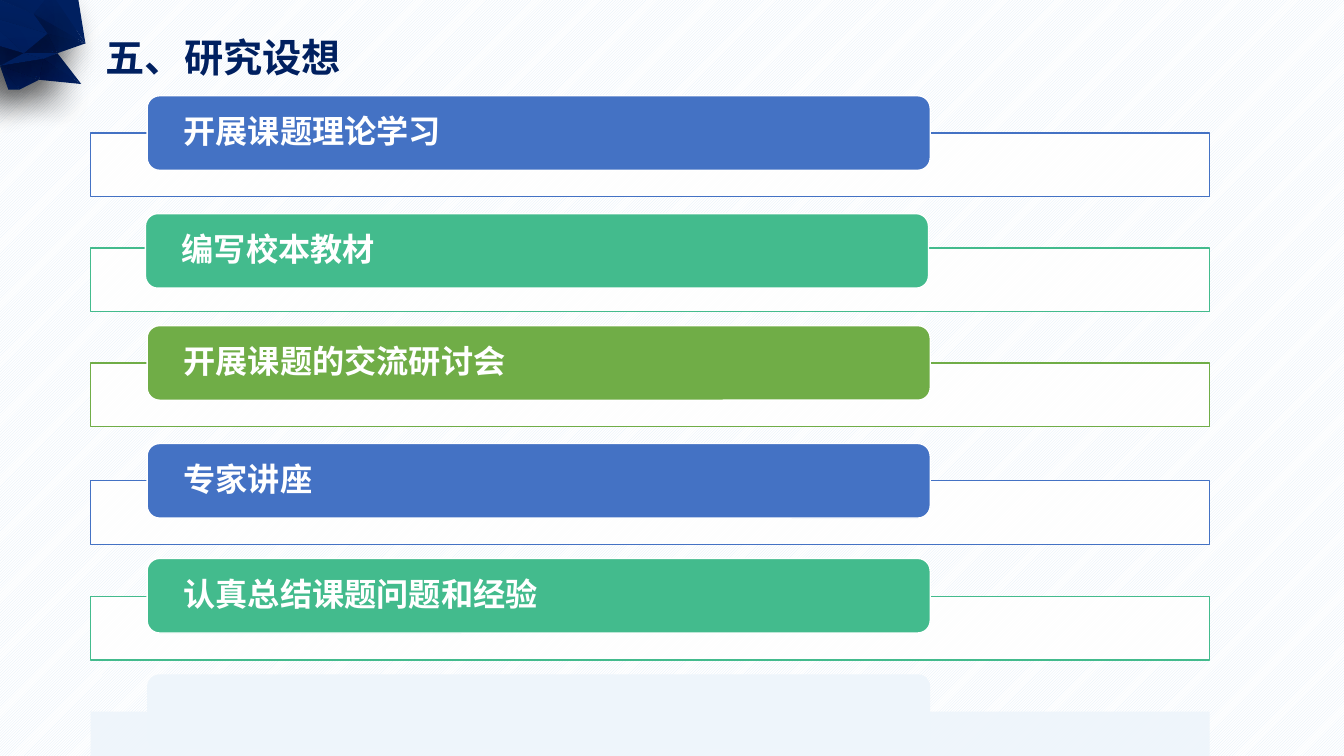
from dataclasses import dataclass

from lxml import etree
from pptx import Presentation
from pptx.dml.color import RGBColor
from pptx.enum.dml import MSO_PATTERN
from pptx.enum.shapes import MSO_SHAPE
from pptx.enum.text import MSO_ANCHOR, MSO_AUTO_SIZE, PP_ALIGN
from pptx.oxml.ns import qn
from pptx.util import Pt

RECTANGLE = MSO_SHAPE.RECTANGLE
ROUNDED = MSO_SHAPE.ROUNDED_RECTANGLE
OVAL = MSO_SHAPE.OVAL
STRIPES = MSO_PATTERN.DARK_UPWARD_DIAGONAL
TOP, MIDDLE = MSO_ANCHOR.TOP, MSO_ANCHOR.MIDDLE
LEFT = PP_ALIGN.LEFT
FIT_SHAPE = MSO_AUTO_SIZE.SHAPE_TO_FIT_TEXT
TITLE_ONLY = 5


@dataclass(frozen=True)
class Theme:
    navy: str = "002060"
    blue: str = "4472C4"
    teal: str = "43BB8D"
    green: str = "70AD47"
    pale: str = "EEF5FB"
    stripe: str = "DEEBF7"
    white: str = "FFFFFF"
    black: str = "000000"
    title_font: str = "Noto Sans CJK SC"
    body_font: str = "Calibri"
    title_size: float = 28
    body_size: float = 23


THEME = Theme()

STEPS = [
    ("开展课题理论学习", THEME.blue, 105.1, 68.4, 95),
    ("编写校本教材", THEME.teal, 103.9, 152.6, 177.1),
    ("开展课题的交流研讨会", THEME.green, 105.1, 232.6, 259.2),
    ("专家讲座", THEME.blue, 105.1, 316.8, 343.4),
    ("认真总结课题问题和经验", THEME.teal, 105.1, 398.9, 426.2),
    ("", THEME.pale, 105.1, 481.7, 508.3),
]

INNER_CRYSTAL = dict(
    A=(54, 57.6), B=(25.9, 54.7), C=(28.8, 40.3), D=(0, 45.4), E=(13, 61.9),
    F=(5.8, 61.2), G=(15.8, 36.7), H=(0, 31.7), I=(37.4, 36.7), J=(31, 23.8),
    K=(56.2, 30.2), L=(22.3, 9.4), M=(29.5, 0), N=(36.7, 0), O=(51.1, 0),
    P=(0, 0), Q=(0, 13), R=(0, 20.9),
)
OUTER_CRYSTAL = dict(
    A=(58.3, 59.8), B=(28.1, 56.9), C=(31, 41.8), D=(0, 46.8), E=(14.4, 64.1),
    F=(5.8, 64.1), G=(17.3, 38.2), H=(0, 33.1), I=(41, 38.2), J=(33.8, 24.5),
    K=(61.2, 31), L=(24.5, 10.1), M=(31.7, 0), N=(40.3, 0), O=(56.2, 0),
    P=(0, 0), Q=(0, 13.7), R=(0, 21.6),
)
FACETS = ("ABC DBC EBD EFD DGH ICA JGI IKJ JKL MLKN NKO MLP QPLJ RGJQ HRG "
          "DGC GIC").split()
DOTTED_CORNERS = "EFBCIGJL"
DOT = 0.8


class Canvas:
    def __init__(self, theme, page):
        self.theme = theme
        self.page = page

    def background(self):
        fill = self.page.background.fill
        fill.patterned()
        fill.pattern = STRIPES
        fill.fore_color.rgb = RGBColor.from_string(self.theme.stripe)
        fill.back_color.rgb = RGBColor.from_string(self.theme.white)

    def paint(self, shape, fill, line=None, opacity=None):
        shape.shadow.inherit = False
        shape.fill.solid()
        shape.fill.fore_color.rgb = RGBColor.from_string(fill)
        if opacity:
            color = shape.element.spPr.find(qn("a:solidFill")).find(qn("a:srgbClr"))
            etree.SubElement(color, qn("a:alpha"), val=str(opacity * 1000))
        if line:
            shape.line.color.rgb = RGBColor.from_string(line)
            shape.line.width = Pt(1)
        else:
            shape.line.fill.background()

    def cast_shadow(self, shape):
        effects = shape.element.spPr.find(qn("a:effectLst"))
        shadow = etree.SubElement(
            effects, qn("a:outerShdw"), blurRad=str(Pt(25)), dist=str(Pt(15)),
            dir=str(135 * 60000), algn="tr", rotWithShape="0")
        color = etree.SubElement(shadow, qn("a:srgbClr"), val=self.theme.black)
        etree.SubElement(color, qn("a:alpha"), val="50000")

    def shape(self, kind, left, top, width, height, parent=None):
        shapes = (parent or self.page).shapes
        return shapes.add_shape(kind, Pt(left), Pt(top), Pt(width), Pt(height))

    def add_span(self, para, text, font, size, color):
        span = para.add_run()
        span.text = text
        span.font.name = font
        span.font.size = Pt(size)
        span.font.bold = True
        span.font.color.rgb = RGBColor.from_string(color)
        return span

    def title(self, text, left, top, width, height):
        box = self.page.shapes.title
        box.left, box.top = Pt(left), Pt(top)
        box.width, box.height = Pt(width), Pt(height)
        frame = box.text_frame
        frame.word_wrap = False
        frame.auto_size = FIT_SHAPE
        frame.vertical_anchor = TOP
        para = frame.paragraphs[0]
        para.alignment = LEFT
        theme = self.theme
        span = self.add_span(para, text, theme.title_font, theme.title_size, theme.navy)
        properties = span._r.get_or_add_rPr()
        etree.SubElement(properties, qn("a:ea"), typeface=theme.title_font)

    def frame(self, top, fill, line):
        box = self.shape(RECTANGLE, 64.8, top, 799.2, 45.4)
        self.paint(box, fill, line, opacity=90)

    def tab(self, text, left, top, fill, line):
        box = self.shape(ROUNDED, left, top, 559.4, 53.3)
        self.paint(box, fill, line)
        if not text:
            return
        frame = box.text_frame
        frame.word_wrap = True
        frame.vertical_anchor = MIDDLE
        frame.margin_left = frame.margin_right = Pt(23.4)
        frame.margin_top = frame.margin_bottom = Pt(2.6)
        para = frame.paragraphs[0]
        para.alignment = LEFT
        para.line_spacing = 0.9
        theme = self.theme
        self.add_span(para, text, theme.body_font, theme.body_size, theme.white)

    def facet(self, group, corners):
        builder = group.shapes.build_freeform(*corners[0], scale=Pt(1))
        builder.add_line_segments(corners[1:], close=True)
        shape = builder.convert_to_shape()
        self.paint(shape, self.theme.navy)
        self.cast_shadow(shape)

    def dot(self, group, x, y):
        shape = self.shape(OVAL, x - DOT / 2, y - DOT / 2, DOT, DOT, group)
        self.paint(shape, self.theme.navy)
        self.cast_shadow(shape)

    def crystal(self):
        group = self.page.shapes.add_group_shape()
        for corners in (INNER_CRYSTAL, OUTER_CRYSTAL):
            for names in FACETS:
                self.facet(group, [corners[name] for name in names])
        for name in DOTTED_CORNERS:
            self.dot(group, *INNER_CRYSTAL[name])


def main():
    deck = Presentation()
    deck.slide_width, deck.slide_height = Pt(960), Pt(540)
    page = deck.slides.add_slide(deck.slide_layouts[TITLE_ONLY])
    canvas = Canvas(THEME, page)
    canvas.background()
    canvas.crystal()
    canvas.title("五、研究设想", 68.4, 20.2, 184.3, 41)
    for text, color, tab_left, tab_top, frame_top in STEPS:
        canvas.frame(frame_top, THEME.white if text else color, color if text else None)
        canvas.tab(text, tab_left, tab_top, color, THEME.white if text else None)
    deck.save("out.pptx")


if __name__ == "__main__":
    main()
